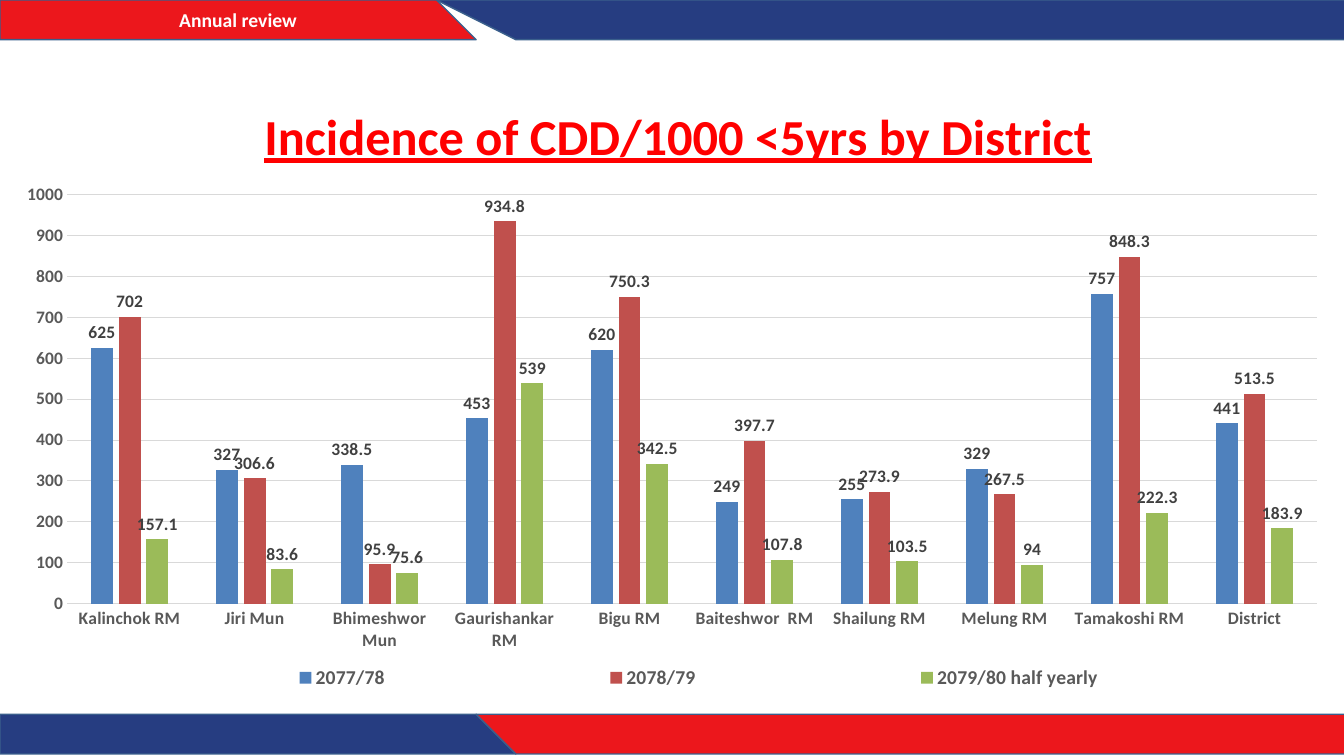
import dataclasses

import lxml.etree
import pptx
import pptx.chart.data
import pptx.dml.color
import pptx.enum.chart
import pptx.enum.text
import pptx.oxml.ns
import pptx.util

Cm = pptx.util.Cm


@dataclasses.dataclass(frozen=True)
class Theme:
    face: str = "Calibri"
    red: str = "EC171C"
    blue: str = "263D81"
    edge: str = "3A5F8C"
    white: str = "FFFFFF"
    title: str = "FF0000"
    axis: str = "595959"
    label: str = "404040"
    grid: str = "D9D9D9"
    series: tuple = ("4F81BD", "C0504D", "9BBB59")
    title_size: float = 36
    band_size: float = 14
    legend_size: float = 14
    chart_size: float = 12.5


THEME = Theme()

BANDS = (
    ((0.1, 0.08, 12.2, 0.74), ((0, 0.04), (0.9, 0), (1, 1), (0, 1)), THEME.red, "Annual review"),
    ((0.1, 17.75, 12.8, 1.22), ((0, 0), (0.9, 0.02), (1, 1), (0, 1)), THEME.blue, ""),
    ((11.91, 17.75, 21.87, 1.22), ((0, 0.02), (1, 0), (1, 0.94), (0.06, 1)), THEME.red, ""),
    ((11.46, 0.13, 22.33, 0.71), ((0, 0), (1, 0.07), (1, 1), (0.05, 0.93)), THEME.blue, ""),
)

DISTRICTS = (
    "Kalinchok RM", "Jiri Mun", "Bhimeshwor Mun", "Gaurishankar RM", "Bigu RM",
    "Baiteshwor  RM", "Shailung RM", "Melung RM", "Tamakoshi RM", "District",
)
INCIDENCE = {
    "2077/78": (625, 327, 338.5, 453, 620, 249, 255, 329, 757, 441),
    "2078/79": (702, 306.6, 95.9, 934.8, 750.3, 397.7, 273.9, 267.5, 848.3, 513.5),
    "2079/80 half yearly": (157.1, 83.6, 75.6, 539, 342.5, 107.8, 103.5, 94, 222.3, 183.9),
}


def rgb(value):
    return pptx.dml.color.RGBColor.from_string(value)


def style_font(font, size, color, underline=None):
    font.name = THEME.face
    font.size = pptx.util.Pt(size)
    font.bold = True
    font.underline = underline
    font.color.rgb = rgb(color)


def write(frame, text, **style):
    para = frame.paragraphs[0]
    para.alignment = pptx.enum.text.PP_ALIGN.CENTER
    span = para.add_run()
    span.text = text
    style_font(span.font, **style)


def add_band(page, box, corners, fill, text):
    left, top, width, height = box
    points = [(left + across * width, top + down * height) for across, down in corners]
    builder = page.shapes.build_freeform(*points[0], scale=Cm(1))
    builder.add_line_segments(points[1:], close=True)
    band = builder.convert_to_shape()
    band.shadow.inherit = False
    band.fill.solid()
    band.fill.fore_color.rgb = rgb(fill)
    band.line.color.rgb = rgb(THEME.edge)
    band.line.width = pptx.util.Pt(1)
    if text:
        frame = band.text_frame
        frame.margin_top = frame.margin_bottom = 0
        frame.vertical_anchor = pptx.enum.text.MSO_ANCHOR.MIDDLE
        write(frame, text, size=THEME.band_size, color=THEME.white)


def set_layout(parent, index, target=None, **position):
    name = pptx.oxml.ns.qn
    for old in parent.findall(name("c:layout")):
        parent.remove(old)
    layout = lxml.etree.Element(name("c:layout"))
    manual = lxml.etree.SubElement(layout, name("c:manualLayout"))
    settings = {"layoutTarget": target} if target else {}
    settings.update(xMode="edge", yMode="edge", **position)
    for key, value in settings.items():
        lxml.etree.SubElement(manual, name("c:" + key)).set("val", str(value))
    parent.insert(index, layout)


def style_axes(chart):
    for axis in (chart.category_axis, chart.value_axis):
        axis.major_tick_mark = pptx.enum.chart.XL_TICK_MARK.NONE
        axis.minor_tick_mark = pptx.enum.chart.XL_TICK_MARK.NONE
        style_font(axis.tick_labels.font, THEME.chart_size, THEME.axis)
    values = chart.value_axis
    values.minimum_scale, values.maximum_scale, values.major_unit = 0, 1000, 100
    values.format.line.fill.background()
    for line in (chart.category_axis.format.line, values.major_gridlines.format.line):
        line.color.rgb = rgb(THEME.grid)
        line.width = pptx.util.Pt(0.75)


def style_columns(plot):
    plot.gap_width = 219
    plot.overlap = -27
    plot.vary_by_categories = False
    for series, color in zip(plot.series, THEME.series):
        series.format.fill.solid()
        series.format.fill.fore_color.rgb = rgb(color)
        series.invert_if_negative = False
        labels = series.data_labels
        labels.show_value = True
        labels.position = pptx.enum.chart.XL_LABEL_POSITION.OUTSIDE_END
        style_font(labels.font, THEME.chart_size, THEME.label)


def add_incidence_chart(page, box):
    table = pptx.chart.data.CategoryChartData()
    table.categories = DISTRICTS
    for year, values in INCIDENCE.items():
        table.add_series(year, values)
    kind = pptx.enum.chart.XL_CHART_TYPE.COLUMN_CLUSTERED
    chart = page.shapes.add_chart(kind, *map(Cm, box), table).chart
    chart.font.name = THEME.face
    chart.font.size = pptx.util.Pt(THEME.chart_size)
    chart.font.color.rgb = rgb(THEME.axis)

    chart.has_title = True
    write(chart.chart_title.text_frame, "Incidence of CDD/1000 <5yrs by District",
          size=THEME.title_size, color=THEME.title, underline=True)
    chart.chart_title.include_in_layout = False
    chart.has_legend = True
    legend = chart.legend
    legend.position = pptx.enum.chart.XL_LEGEND_POSITION.BOTTOM
    legend.include_in_layout = False
    style_font(legend.font, THEME.legend_size, THEME.axis)

    style_axes(chart)
    style_columns(chart.plots[0])
    root = chart.element.chart
    set_layout(root.find(pptx.oxml.ns.qn("c:title")), 1, x=0.19, y=0.05)
    set_layout(root.plotArea, 0, "inner", x=0.05, y=0.21, w=0.93, h=0.635)
    set_layout(root.find(pptx.oxml.ns.qn("c:legend")), 1, x=0.06, y=0.935, w=0.92, h=0.05)


def main():
    deck = pptx.Presentation()
    deck.slide_width, deck.slide_height = Cm(33.87), Cm(19.05)
    page = deck.slides.add_slide(deck.slide_layouts[6])
    for band in BANDS:
        add_band(page, *band)
    add_incidence_chart(page, (0, 1.5, 33.87, 16.23))
    deck.save("out.pptx")


if __name__ == "__main__":
    main()
